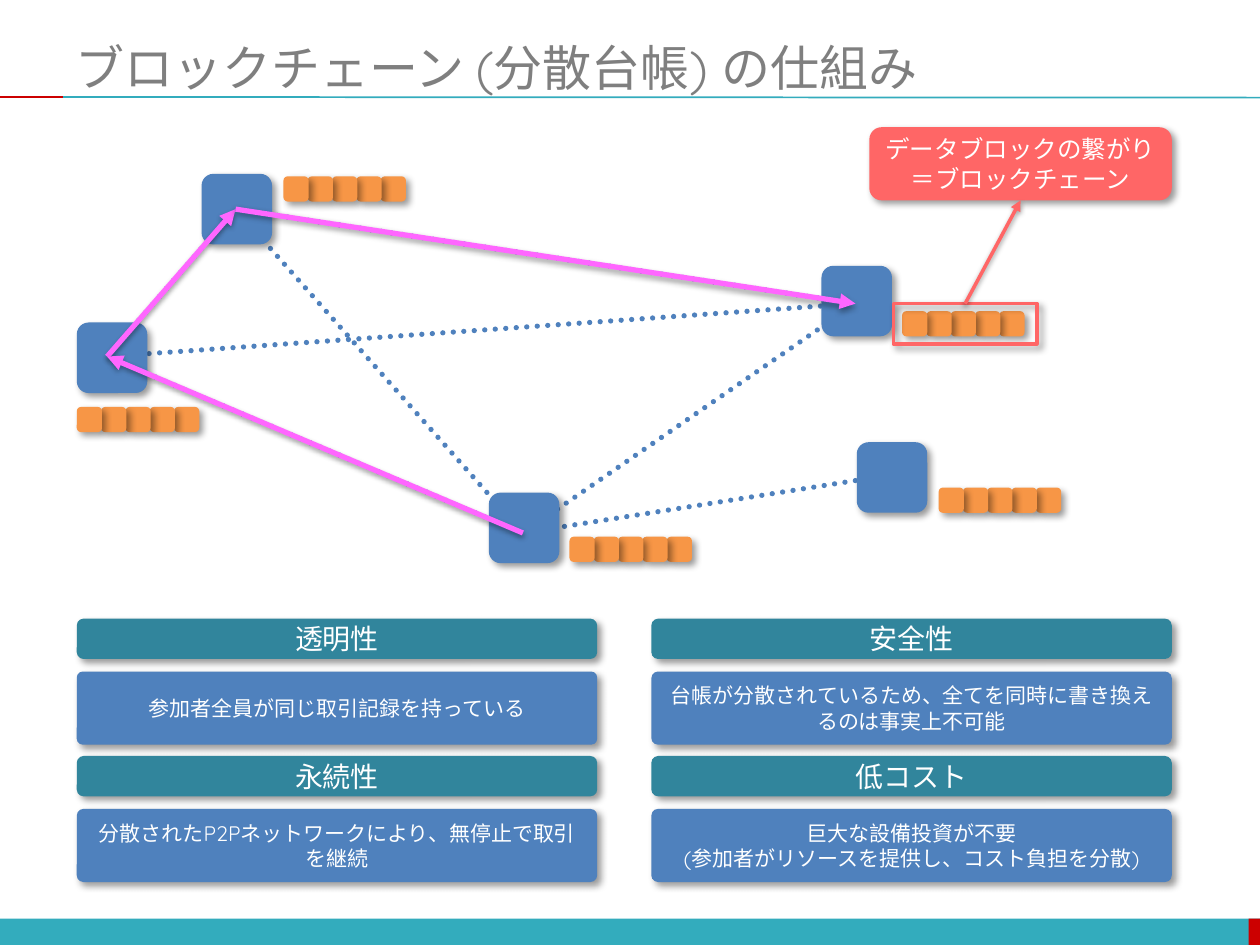
from dataclasses import dataclass
from typing import Any, NamedTuple, Optional

import pptx
import pptx.dml.color
import pptx.enum.dml
import pptx.enum.shapes
import pptx.enum.text
import pptx.oxml.ns
import pptx.util
from lxml import etree

COLUMNS, ROWS = 100, 75
SLIDE_WIDTH, SLIDE_HEIGHT = pptx.util.Inches(10), pptx.util.Inches(7.5)
MSO_SHAPE = pptx.enum.shapes.MSO_SHAPE
qn = pptx.oxml.ns.qn


class Shadow(NamedTuple):
    alpha: int
    blur: float
    distance: float
    angle: int


@dataclass(frozen=True)
class Theme:
    font: str = "Quicksand"
    title: str = "7F7F7F"
    text: str = "FFFFFF"
    teal: str = "33ACBD"
    red: str = "CC0000"
    blue: str = "4F81BD"
    orange: str = "F79646"
    header: str = "31859C"
    coral: str = "FF6666"
    pink: str = "FF66FF"
    title_size: int = 28
    header_size: int = 16
    callout_size: int = 14
    body_size: int = 12
    box_shadow: Shadow = Shadow(40, 4, 3, 45)
    arrow_shadow: Shadow = Shadow(38, 3.1, 1.6, 90)


class Point(NamedTuple):
    col: float
    row: float


class Area(NamedTuple):
    col: float
    row: float
    cols: float
    rows: float


class Node(NamedTuple):
    hub: Point
    corner: Point
    chain: Point


class Benefit(NamedTuple):
    header: str
    body: str
    corner: Point
    adjust: float = 0.09


THEME = Theme()
NODE_SIZE, BLOCK_SIZE, BLOCK_PITCH, BLOCK_COUNT = 5.6, 2, 1.93, 5
CARD_COLS, HEADER_ROWS, BODY_ROWS, BODY_OFFSET = 41.3, 3.2, 5.8, 4.2
LEFT, RIGHT, UPPER, LOWER = 6.1, 51.7, 49.1, 60

NODES = {
    "top": Node(Point(18.7, 16.6), Point(16, 13.8), Point(22.5, 14)),
    "left": Node(Point(8.5, 28.3), Point(6.1, 25.6), Point(6.1, 32.3)),
    "bottom": Node(Point(41.5, 42.3), Point(38.8, 39.1), Point(45.2, 42.6)),
    "right": Node(Point(67.9, 24.1), Point(65.2, 21.1), Point(71.6, 24.7)),
    "far": Node(Point(70.7, 37.7), Point(68, 35.1), Point(74.5, 38.7)),
}
PEER_LINKS = [("top", "right"), ("top", "left"), ("top", "bottom"), ("left", "bottom"),
              ("left", "right"), ("bottom", "right"), ("bottom", "far")]
TRANSFERS = [("left", "top"), ("top", "right"), ("bottom", "left")]
BENEFITS = [
    Benefit("透明性", "参加者全員が同じ取引記録を持っている", Point(LEFT, UPPER), 0.08),
    Benefit("安全性", "台帳が分散されているため、全てを同時に書き換えるのは事実上不可能",
            Point(RIGHT, UPPER)),
    Benefit("永続性", "分散されたP2Pネットワークにより、無停止で取引を継続", Point(LEFT, LOWER)),
    Benefit("低コスト", "巨大な設備投資が不要\n(参加者がリソースを提供し、コスト負担を分散)",
            Point(RIGHT, LOWER)),
]


def across(cols: float) -> int:
    return round(SLIDE_WIDTH * cols / COLUMNS)


def down(rows: float) -> int:
    return round(SLIDE_HEIGHT * rows / ROWS)


def rgb(color: str) -> pptx.dml.color.RGBColor:
    return pptx.dml.color.RGBColor.from_string(color)


def apply_format(target: Any, values: dict[str, Any]) -> None:
    for name, value in values.items():
        setattr(target, name, value)


def write(frame: Any, text: str, size: int, color: str, alignment: Any) -> None:
    apply_format(frame, {"text": text, "word_wrap": True,
                         "auto_size": pptx.enum.text.MSO_AUTO_SIZE.NONE,
                         "vertical_anchor": pptx.enum.text.MSO_ANCHOR.MIDDLE})
    for paragraph in frame.paragraphs:
        paragraph.alignment = alignment
        for run in paragraph.runs:
            apply_format(run.font, {"name": THEME.font, "size": pptx.util.Pt(size)})
            run.font.color.rgb = rgb(color)


def cast_shadow(effects: Any, shadow: Shadow) -> None:
    outer = etree.SubElement(effects, qn("a:outerShdw"), {
        "blurRad": str(pptx.util.Pt(shadow.blur)), "dist": str(pptx.util.Pt(shadow.distance)),
        "dir": str(shadow.angle * 60000), "algn": "tl", "rotWithShape": "0"})
    shade = etree.SubElement(outer, qn("a:srgbClr"), val="000000")
    etree.SubElement(shade, qn("a:alpha"), val=str(shadow.alpha * 1000))


def add_box(slide: Any, kind: Any, area: Area, fill: Optional[str] = None,
            outline: Optional[str] = None, shadow: Optional[Shadow] = THEME.box_shadow) -> Any:
    box = slide.shapes.add_shape(kind, across(area.col), down(area.row),
                                 across(area.cols), down(area.rows))
    if fill:
        box.fill.solid()
        box.fill.fore_color.rgb = rgb(fill)
    else:
        box.fill.background()
    if outline:
        box.line.color.rgb = rgb(outline)
        box.line.width = pptx.util.Pt(2)
    else:
        box.line.fill.background()
    box.shadow.inherit = False
    if shadow:
        cast_shadow(box._element.spPr.find(qn("a:effectLst")), shadow)
    return box


def add_label(slide: Any, area: Area, text: str, size: int, fill: str) -> Any:
    label = add_box(slide, MSO_SHAPE.ROUNDED_RECTANGLE, area, fill)
    write(label.text_frame, text, size, THEME.text, pptx.enum.text.PP_ALIGN.CENTER)
    return label


def add_line(slide: Any, start: Point, end: Point, color: str, width: float,
             dotted: bool = False, arrow: bool = False) -> Any:
    line = slide.shapes.add_connector(pptx.enum.shapes.MSO_CONNECTOR.STRAIGHT,
                                      across(start.col), down(start.row),
                                      across(end.col), down(end.row))
    line.line.color.rgb = rgb(color)
    line.line.width = pptx.util.Pt(width)
    outline = line.line._get_or_add_ln()
    if dotted:
        line.line.dash_style = pptx.enum.dml.MSO_LINE.ROUND_DOT
        outline.set("cap", "rnd")
    if arrow:
        etree.SubElement(outline, qn("a:tailEnd"), type="triangle")
    effects = etree.SubElement(line._element.spPr, qn("a:effectLst"))
    if arrow:
        cast_shadow(effects, THEME.arrow_shadow)
    return line


def add_heading(slide: Any) -> None:
    for area, color in ((Area(0, 72.9, 100, 2.15), THEME.teal),
                        (Area(99.1, 72.9, 0.9, 2.15), THEME.red)):
        add_box(slide, MSO_SHAPE.RECTANGLE, area, color, shadow=None)
    add_line(slide, Point(5, 7.7), Point(100, 7.75), THEME.teal, 1)
    add_line(slide, Point(0, 7.7), Point(5, 7.7), THEME.red, 1)
    title = slide.shapes.title
    apply_format(title, {"left": across(5), "top": down(3),
                         "width": across(95), "height": down(4.6)})
    write(title.text_frame, "ブロックチェーン (分散台帳) の仕組み", THEME.title_size,
          THEME.title, pptx.enum.text.PP_ALIGN.LEFT)


def add_network(slide: Any) -> None:
    for start, end in PEER_LINKS:
        add_line(slide, NODES[start].hub, NODES[end].hub, THEME.blue, 3, dotted=True)
    for node in NODES.values():
        add_box(slide, MSO_SHAPE.ROUNDED_RECTANGLE,
                Area(*node.corner, NODE_SIZE, NODE_SIZE), THEME.blue)
        for index in reversed(range(BLOCK_COUNT)):
            add_box(slide, MSO_SHAPE.ROUNDED_RECTANGLE,
                    Area(node.chain.col + index * BLOCK_PITCH, node.chain.row,
                         BLOCK_SIZE, BLOCK_SIZE), THEME.orange)
    for start, end in TRANSFERS:
        add_line(slide, NODES[start].hub, NODES[end].hub, THEME.pink, 3, arrow=True)


def add_callout(slide: Any) -> None:
    callout = add_label(slide, Area(69, 10.1, 24, 5.8),
                        "データブロックの繋がり\n＝ブロックチェーン", THEME.callout_size, THEME.coral)
    chain_frame = add_box(slide, MSO_SHAPE.RECTANGLE, Area(70.9, 24.1, 11.4, 3.2),
                          outline=THEME.coral)
    pointer = add_line(slide, Point(76.6, 24.1), Point(81, 15.9), THEME.coral, 2, arrow=True)
    pointer.begin_connect(chain_frame, 0)
    pointer.end_connect(callout, 2)


def add_benefit(slide: Any, benefit: Benefit) -> None:
    col, row = benefit.corner
    add_label(slide, Area(col, row, CARD_COLS, HEADER_ROWS), benefit.header,
              THEME.header_size, THEME.header)
    body = add_label(slide, Area(col, row + BODY_OFFSET, CARD_COLS, BODY_ROWS), benefit.body,
                     THEME.body_size, THEME.blue)
    body.adjustments[0] = benefit.adjust


def main() -> None:
    deck = pptx.Presentation()
    apply_format(deck, {"slide_width": SLIDE_WIDTH, "slide_height": SLIDE_HEIGHT})
    slide = deck.slides.add_slide(deck.slide_layouts[5])
    add_heading(slide)
    add_network(slide)
    add_callout(slide)
    for benefit in BENEFITS:
        add_benefit(slide, benefit)
    deck.save("out.pptx")


if __name__ == "__main__":
    main()
